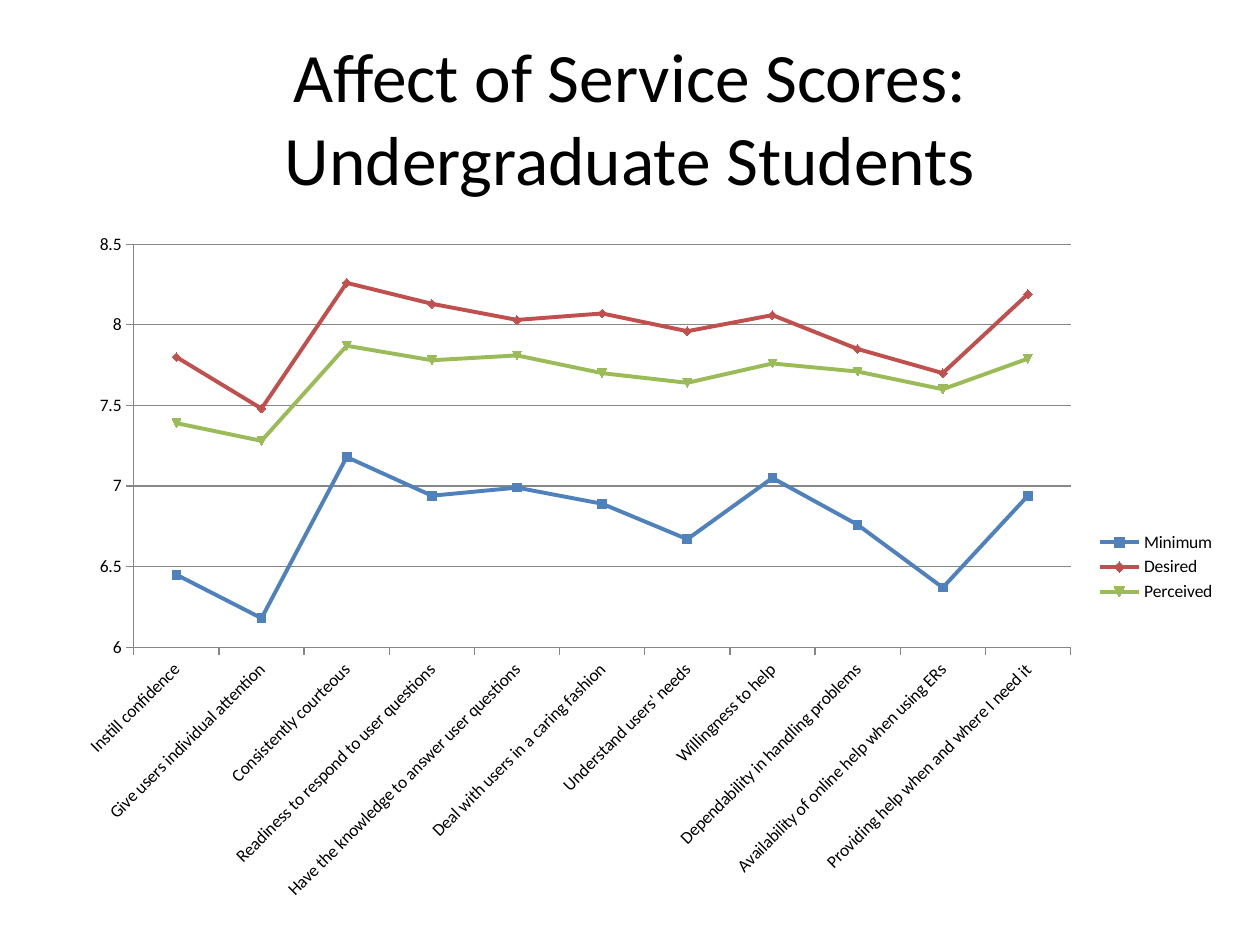
from pptx import Presentation
from pptx.chart.data import CategoryChartData
from pptx.dml.color import RGBColor
from pptx.enum.chart import XL_CHART_TYPE, XL_LEGEND_POSITION, XL_TICK_MARK
from pptx.enum.text import MSO_ANCHOR, PP_ALIGN
from pptx.util import Inches, Pt

TITLE = ["Affect of Service Scores:", "Undergraduate Students"]
SERIES = ["Minimum", "Desired", "Perceived"]
SCORES = [
    ("Instill confidence", 6.45, 7.8, 7.39),
    ("Give users individual attention", 6.18, 7.48, 7.28),
    ("Consistently courteous", 7.18, 8.26, 7.87),
    ("Readiness to respond to user questions", 6.94, 8.13, 7.78),
    ("Have the knowledge to answer user questions", 6.99, 8.03, 7.81),
    ("Deal with users in a caring fashion", 6.89, 8.07, 7.7),
    ("Understand users' needs", 6.67, 7.96, 7.64),
    ("Willingness to help", 7.05, 8.06, 7.76),
    ("Dependability in handling problems", 6.76, 7.85, 7.71),
    ("Availability of online help when using ERs", 6.37, 7.7, 7.6),
    ("Providing help when and where I need it", 6.94, 8.19, 7.79),
]
THEME = {
    "font": "Calibri",
    "title_size": Pt(39.6),
    "chart_size": Pt(10),
    "text": RGBColor.from_string("000000"),
    "axis": RGBColor.from_string("868686"),
    "series": [RGBColor.from_string(c) for c in ("4F81BD", "C0504D", "9BBB59")],
}
LABEL_ANGLE = -45


def style_font(font, size):
    font.name = THEME["font"]
    font.size = size
    font.color.rgb = THEME["text"]


def style_line(line, color, width):
    line.color.rgb = color
    line.width = Pt(width)


def add_title(s):
    sp = s.shapes.title
    sp.left, sp.top, sp.width, sp.height = map(Inches, (0.5, 0.3, 9, 1.25))
    tf = sp.text_frame
    tf.word_wrap = True
    tf.vertical_anchor = MSO_ANCHOR.MIDDLE
    p = tf.paragraphs[0]
    p.alignment = PP_ALIGN.CENTER
    for i, text in enumerate(TITLE):
        if i:
            p.add_line_break()
        r = p.add_run()
        r.text = text
        style_font(r.font, THEME["title_size"])


def style_axes(chart):
    cat, val = chart.category_axis, chart.value_axis
    for axis in (cat, val):
        axis.major_tick_mark = XL_TICK_MARK.OUTSIDE
        axis.minor_tick_mark = XL_TICK_MARK.NONE
        style_line(axis.format.line, THEME["axis"], 0.75)
        style_font(axis.tick_labels.font, THEME["chart_size"])
    val.minimum_scale, val.maximum_scale, val.major_unit = 6, 8.5, 0.5
    val.has_major_gridlines = True
    style_line(val.major_gridlines.format.line, THEME["axis"], 0.75)
    val.tick_labels.number_format = "General"
    val.tick_labels.number_format_is_linked = False
    for body in chart.element.xpath(".//c:catAx/c:txPr/a:bodyPr"):
        body.set("rot", str(LABEL_ANGLE * 60000))
        body.set("vert", "horz")


def add_score_chart(s):
    names, *columns = zip(*SCORES)
    data = CategoryChartData()
    data.categories = names
    for name, values in zip(SERIES, columns):
        data.add_series(name, values)
    box = map(Inches, (0.5, 1.75, 9.25, 5.5))
    chart = s.shapes.add_chart(XL_CHART_TYPE.LINE_MARKERS, *box, data).chart
    chart.has_title = False
    style_font(chart.font, THEME["chart_size"])
    chart.has_legend = True
    chart.legend.position = XL_LEGEND_POSITION.RIGHT
    chart.legend.include_in_layout = False
    style_font(chart.legend.font, THEME["chart_size"])
    style_axes(chart)

    plot = chart.plots[0]
    plot.vary_by_categories = False
    for series, color in zip(plot.series, THEME["series"]):
        series.smooth = False
        style_line(series.format.line, color, 2.25)
        marker = series.marker.format
        marker.fill.solid()
        marker.fill.fore_color.rgb = color
        marker.line.color.rgb = color


def main():
    prs = Presentation()
    prs.slide_width, prs.slide_height = Inches(10), Inches(7.5)
    s = prs.slides.add_slide(prs.slide_layouts[5])
    add_title(s)
    add_score_chart(s)
    prs.save("out.pptx")


if __name__ == "__main__":
    main()
